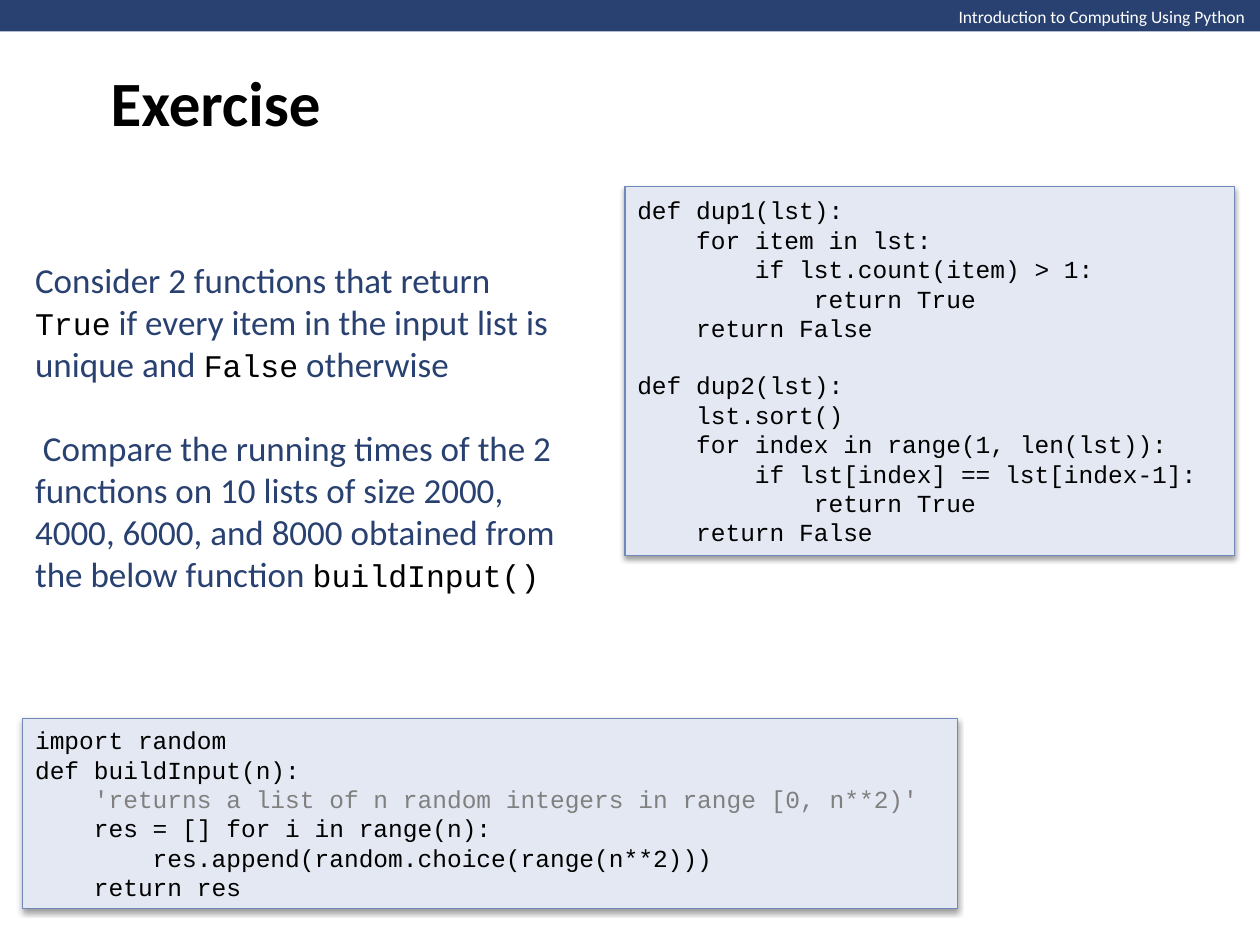
from dataclasses import dataclass

import pptx
import pptx.dml.color
import pptx.enum.shapes
import pptx.enum.text
import pptx.oxml
import pptx.oxml.ns
import pptx.util
from pptx.util import Inches

RGB = pptx.dml.color.RGBColor.from_string
ANCHOR = pptx.enum.text.MSO_ANCHOR
RECTANGLE = pptx.enum.shapes.MSO_SHAPE.RECTANGLE


@dataclass(frozen=True)
class Style:
    font: str
    size: float
    color: str
    bold: bool = False


@dataclass(frozen=True)
class Theme:
    navy: str = "294171"
    panel_fill: str = "E3E8F2"
    panel_line: str = "7088BA"
    header: Style = Style("Calibri", 10, "FFFFFF")
    title: Style = Style("Calibri", 36, "000000", True)
    body: Style = Style("Calibri", 20, "294171")
    inline_code: Style = Style("Courier New", 18, "000000")
    code: Style = Style("Courier New", 14, "000000")
    docstring: Style = Style("Courier New", 14, "808080")


THEME = Theme()


@dataclass(frozen=True)
class Box:
    left: float
    top: float
    width: float
    height: float

    def emu(self) -> tuple:
        return tuple(map(Inches, (self.left, self.top, self.width, self.height)))


@dataclass(frozen=True)
class Para:
    text: str
    style: Style
    space_before: float = 0


@dataclass(frozen=True)
class CodePanel:
    box: Box
    functions: tuple[str, ...]


PANELS = (
    CodePanel(Box(4.96, 1.48, 4.84, 2.93), (
        """def dup1(lst):
    for item in lst:
        if lst.count(item) > 1:
            return True
    return False""",
        """def dup2(lst):
    lst.sort()
    for index in range(1, len(lst)):
        if lst[index] == lst[index-1]:
            return True
    return False""",
    )),
    CodePanel(Box(0.18, 5.7, 7.42, 1.51), (
        """import random
def buildInput(n):
    'returns a list of n random integers in range [0, n**2)'
    res = [] for i in range(n):
        res.append(random.choice(range(n**2)))
    return res""",
    )),
)

BODY = (
    Para("Consider 2 functions that return `True` if every item in the input list "
         "is unique and `False` otherwise", THEME.body),
    Para(" Compare the running times of the 2 functions on 10 lists of size 2000, "
         "4000, 6000, and 8000 obtained from", THEME.body, 24),
    Para("the below function `buildInput()`", THEME.body),
)


def apply_style(font, style: Style) -> None:
    font.name = style.font
    font.size = pptx.util.Pt(style.size)
    font.bold = style.bold
    font.color.rgb = RGB(style.color)


def write(tf, paras, anchor=ANCHOR.MIDDLE, wrap: bool = True) -> None:
    tf.word_wrap = wrap
    tf.vertical_anchor = anchor
    for i, para in enumerate(paras):
        p = tf.add_paragraph() if i else tf.paragraphs[0]
        p.alignment = pptx.enum.text.PP_ALIGN.LEFT
        p.space_before = pptx.util.Pt(para.space_before)
        apply_style(p.font, para.style)
        for j, part in enumerate(para.text.split("`")):
            if part:
                r = p.add_run()
                r.text = part
                if j % 2:
                    apply_style(r.font, THEME.inline_code)


def add_text(slide, box: Box, paras, **layout) -> None:
    write(slide.shapes.add_textbox(*box.emu()).text_frame, paras, **layout)


def add_rect(slide, box: Box, fill: str):
    sp = slide.shapes.add_shape(RECTANGLE, *box.emu())
    sp.shadow.inherit = False
    sp.fill.solid()
    sp.fill.fore_color.rgb = RGB(fill)
    sp.line.fill.background()
    return sp


def add_shadow(sp) -> None:
    effects = sp._element.spPr.find(pptx.oxml.ns.qn("a:effectLst"))
    blur, dist = pptx.util.Pt(3.1), pptx.util.Pt(1.6)
    effects.append(pptx.oxml.parse_xml(
        f'<a:outerShdw {pptx.oxml.ns.nsdecls("a")} blurRad="{blur}" dist="{dist}" '
        'dir="5400000" rotWithShape="0"><a:srgbClr val="000000">'
        '<a:alpha val="38000"/></a:srgbClr></a:outerShdw>'))


def code_paras(functions: tuple[str, ...]) -> list[Para]:
    return [
        Para(line,
             THEME.docstring if line.lstrip().startswith("'") else THEME.code,
             16 if i and not j else 0)
        for i, function in enumerate(functions)
        for j, line in enumerate(function.splitlines())
    ]


def add_code_panel(slide, panel: CodePanel) -> None:
    sp = add_rect(slide, panel.box, THEME.panel_fill)
    sp.line.color.rgb = RGB(THEME.panel_line)
    sp.line.width = pptx.util.Pt(0.75)
    add_shadow(sp)
    write(sp.text_frame, code_paras(panel.functions))


def main() -> None:
    prs = pptx.Presentation()
    prs.slide_width, prs.slide_height = Inches(10), Inches(7.5)
    slide = prs.slides.add_slide(prs.slide_layouts[6])

    add_rect(slide, Box(0, 0, 10, 0.25), THEME.navy)
    add_text(slide, Box(7.51, 0, 2.5, 0.27),
             [Para("Introduction to Computing Using Python", THEME.header)],
             anchor=ANCHOR.TOP, wrap=False)
    add_text(slide, Box(0.78, 0, 9.02, 1.61), [Para("Exercise", THEME.title)])
    add_text(slide, Box(0.18, 1.99, 4.42, 2.79), BODY)
    for panel in PANELS:
        add_code_panel(slide, panel)

    prs.save("out.pptx")


if __name__ == "__main__":
    main()
